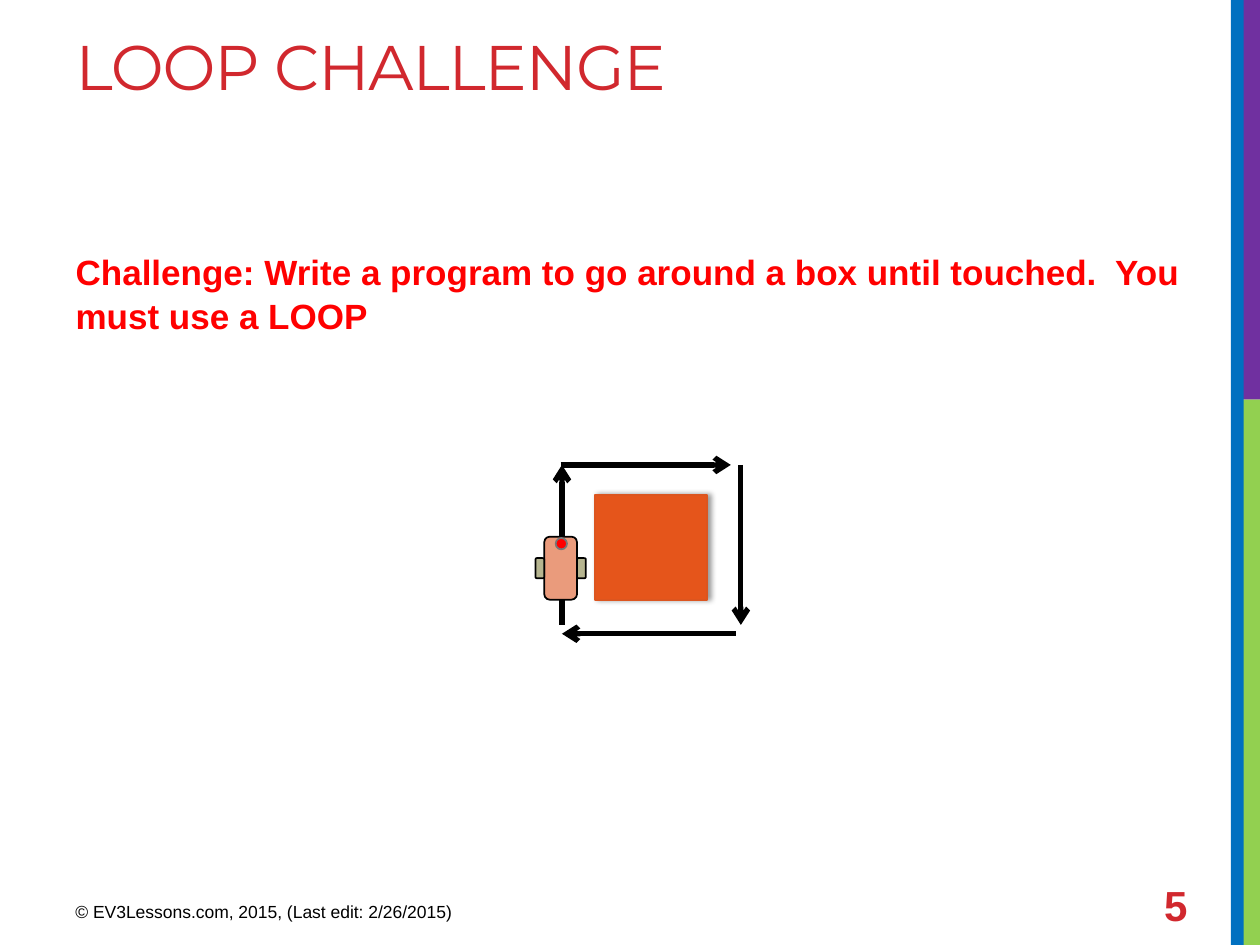
"""Build the loop challenge slide: a robot driving around a box."""
from lxml import etree
from pptx import Presentation
from pptx.dml.color import RGBColor
from pptx.enum import shapes, text
from pptx.oxml import parse_xml
from pptx.oxml.ns import nsdecls, qn
from pptx.util import Inches, Pt

BLACK = RGBColor(0x00, 0x00, 0x00)
RED = RGBColor(0xFF, 0x00, 0x00)
CRIMSON = RGBColor(0xD1, 0x28, 0x2E)
GREEN = RGBColor(0x92, 0xD0, 0x50)
PURPLE = RGBColor(0x70, 0x30, 0xA0)
BLUE = RGBColor(0x00, 0x70, 0xC0)
ORANGE = RGBColor(0xE5, 0x55, 0x1B)
ORANGE_EDGE = RGBColor(0xDC, 0x55, 0x1F)
SALMON = RGBColor(0xEA, 0x9B, 0x7C)
WHEEL = RGBColor(0xB6, 0xB5, 0x90)
GRAY = RGBColor(0x77, 0x77, 0x77)
MSO = shapes.MSO_SHAPE


def add_box(parent, kind, at, fill, line=None):
    sp = parent.add_shape(kind, *map(Inches, at))
    sp.shadow.inherit = False
    sp.fill.solid()
    sp.fill.fore_color.rgb = fill
    if line is None:
        sp.line.fill.background()
    else:
        sp.line.color.rgb = line
        sp.line.width = Pt(1)
    return sp


def write(sp, at, words, font, size, color, bold=False, anchor=text.MSO_ANCHOR.TOP):
    sp.left, sp.top, sp.width, sp.height = map(Inches, at)
    tf = sp.text_frame
    tf.word_wrap = True
    tf.auto_size = text.MSO_AUTO_SIZE.NONE
    tf.vertical_anchor = anchor
    p = tf.paragraphs[0]
    p.alignment = text.PP_ALIGN.LEFT
    p.space_before = Pt(0)
    r = p.add_run()
    r.text = words
    r.font.name = font
    r.font.size = Pt(size)
    r.font.bold = bold
    r.font.color.rgb = color
    return p


prs = Presentation()
prs.slide_width, prs.slide_height = Inches(10), Inches(7.5)
s = prs.slides.add_slide(prs.slide_layouts[1])

for at, color in [
    ((9.85, 3.17, 0.16, 4.33), GREEN),
    ((9.81, 0, 0.2, 3.17), PURPLE),
    ((9.77, 0, 0.1, 7.5), BLUE),
]:
    add_box(s.shapes, MSO.RECTANGLE, at, color)

p = write(s.shapes.title, (0.5, 0.17, 9.02, 1.5), "LOOP CHALLENGE", "Montserrat", 36, CRIMSON)
p.runs[0].font._element.set("spc", "-60")

p = write(s.placeholders[1], (0.5, 1.92, 9.02, 4.78),
          "Challenge: Write a program to go around a box until touched.  You must use a LOOP",
          "Arial", 20, RED, bold=True)
p.space_after = Pt(6)
p.line_spacing = 1.05
pPr = p._p.get_or_add_pPr()
pPr.set("marL", "0")
pPr.set("indent", "0")
etree.SubElement(pPr, qn("a:buNone"))

for at, words, size, color, bold, anchor in [
    ((0.5, 7.1, 3.75, 0.31), "© EV3Lessons.com, 2015, (Last edit: 2/26/2015)",
     10, BLACK, False, text.MSO_ANCHOR.TOP),
    ((9.14, 6.98, 0.65, 0.4), "5", 24, CRIMSON, True, text.MSO_ANCHOR.MIDDLE),
]:
    write(s.shapes.add_textbox(0, 0, 0, 0), at, words, "Arial", size, color, bold, anchor)

box = add_box(s.shapes, MSO.RECTANGLE, (4.72, 3.93, 0.89, 0.83), ORANGE, ORANGE_EDGE)
effects = box._element.spPr.find(qn("a:effectLst"))
effects.append(parse_xml(
    f'<a:outerShdw {nsdecls("a")} blurRad="{Pt(3.1)}" dist="{Pt(1.8)}" dir="0" rotWithShape="0">'
    '<a:srgbClr val="000000"><a:alpha val="40000"/></a:srgbClr></a:outerShdw>'))

for ends in [
    (4.46, 4.96, 4.46, 3.69),
    (4.45, 3.69, 5.8, 3.69),
    (5.88, 3.69, 5.88, 4.96),
    (5.84, 5.03, 4.46, 5.03),
]:
    arrow = s.shapes.add_connector(shapes.MSO_CONNECTOR.STRAIGHT, *map(Inches, ends))
    arrow.line.color.rgb = BLACK
    arrow.line.width = Pt(3)
    etree.SubElement(arrow.line._get_or_add_ln(), qn("a:tailEnd"), type="arrow")
    etree.SubElement(arrow._element.spPr, qn("a:effectLst"))

robot = s.shapes.add_group_shape()
for kind, at, fill, line in [
    (MSO.ROUNDED_RECTANGLE, (4.32, 4.26, 0.26, 0.5), SALMON, BLACK),
    (MSO.ROUNDED_RECTANGLE, (4.58, 4.43, 0.07, 0.16), WHEEL, BLACK),
    (MSO.ROUNDED_RECTANGLE, (4.25, 4.43, 0.07, 0.16), WHEEL, BLACK),
    (MSO.OVAL, (4.41, 4.27, 0.09, 0.09), RED, GRAY),
]:
    add_box(robot.shapes, kind, at, fill, line)

prs.save("out.pptx")
